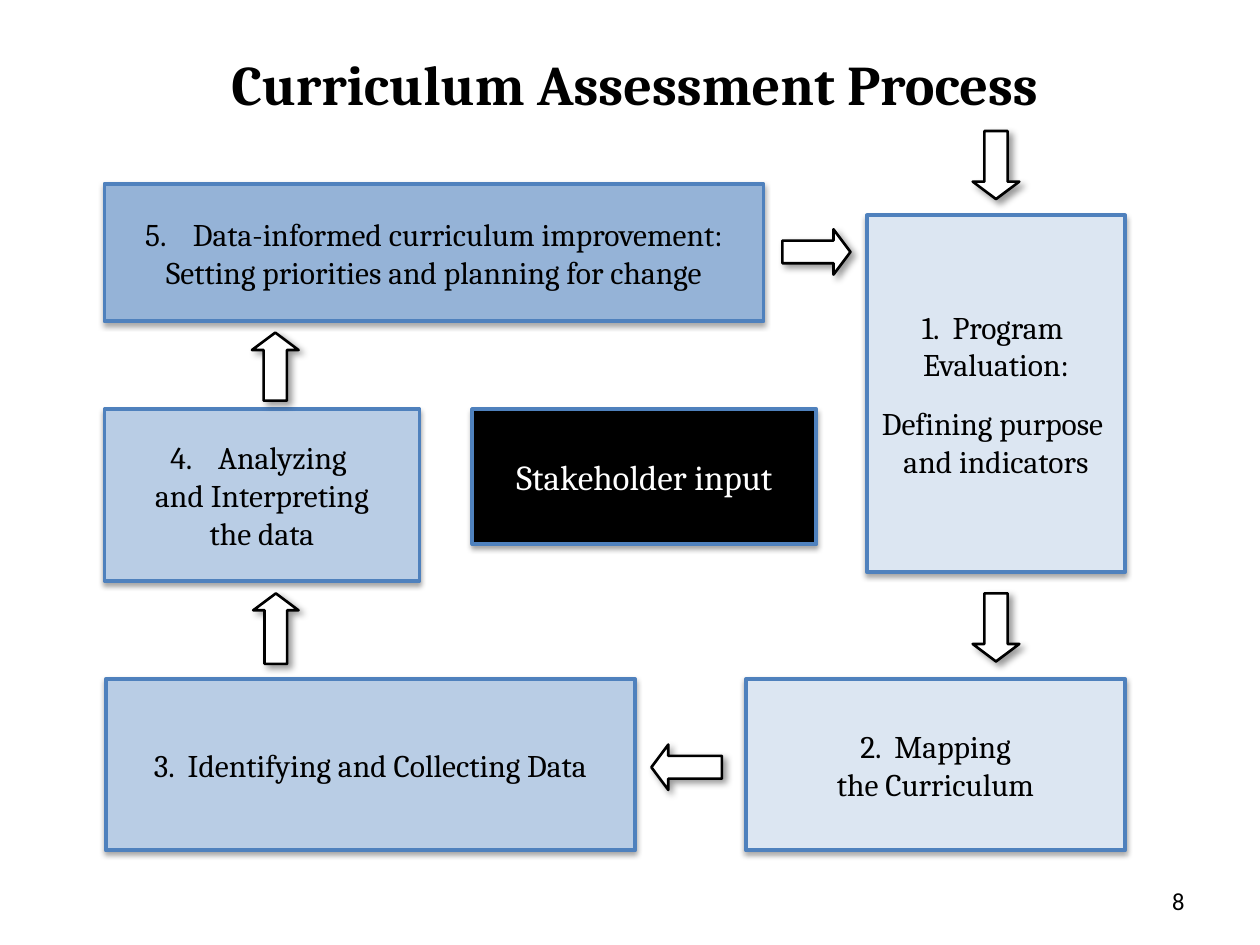
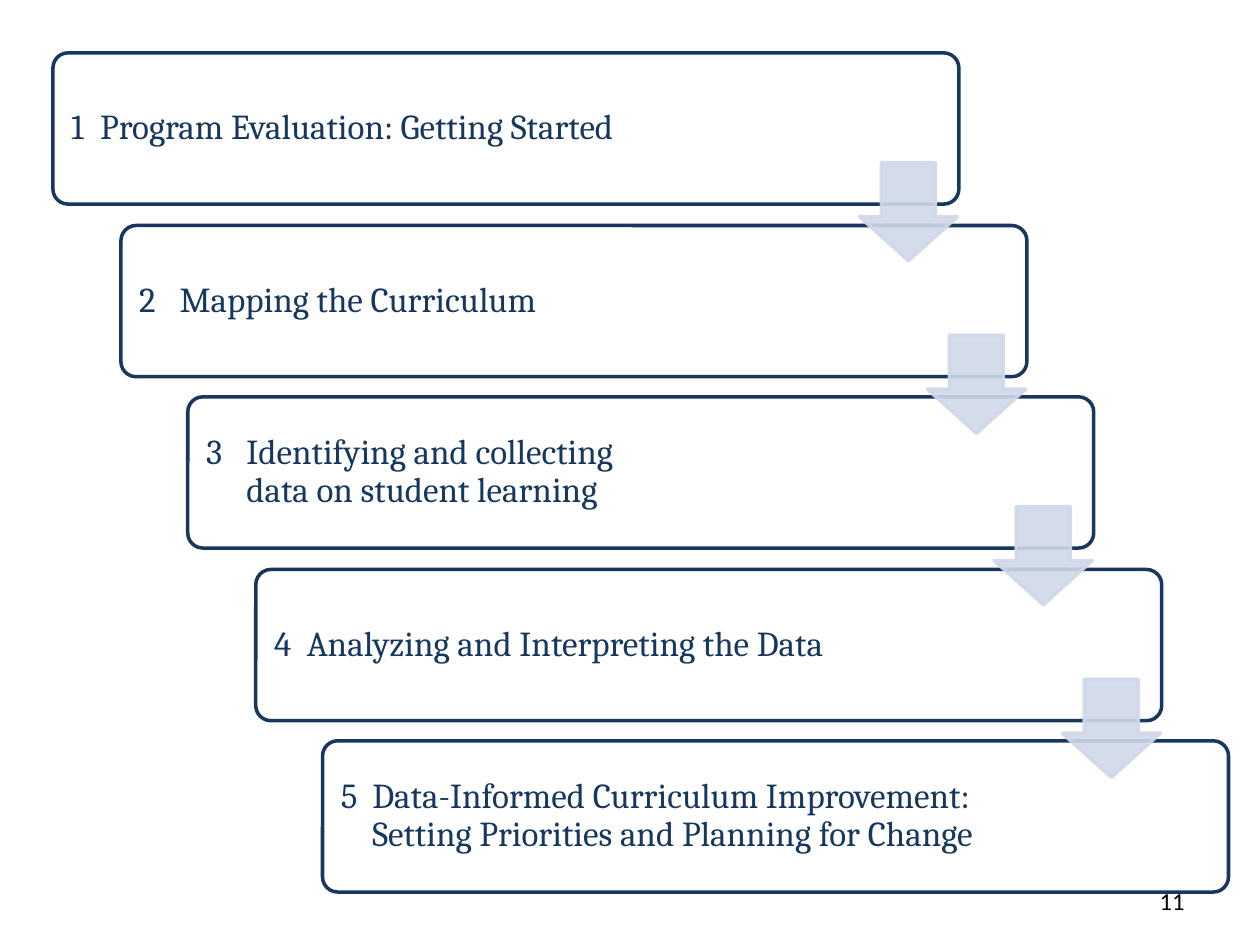
from pptx import Presentation
from pptx.dml.color import RGBColor
from pptx.enum.shapes import MSO_SHAPE
from pptx.enum.text import MSO_ANCHOR, PP_ALIGN
from pptx.oxml import parse_xml
from pptx.oxml.ns import nsdecls, qn
from pptx.util import Emu, Pt

EMU_PER_PX = 9144
BOX, ROUND = MSO_SHAPE.FLOWCHART_PROCESS, MSO_SHAPE.ROUNDED_RECTANGLE
UP, DOWN = MSO_SHAPE.UP_ARROW, MSO_SHAPE.DOWN_ARROW
LEFT, RIGHT = MSO_SHAPE.LEFT_ARROW, MSO_SHAPE.RIGHT_ARROW
MIDDLE = MSO_ANCHOR.MIDDLE
AL_LEFT, AL_CENTER, AL_RIGHT = PP_ALIGN.LEFT, PP_ALIGN.CENTER, PP_ALIGN.RIGHT

COLORS = {
    "black": "000000", "white": "FFFFFF", "outline": "4F81BD",
    "pale": "DCE6F2", "light": "B9CDE5", "medium": "95B3D7",
    "navy": "17375E", "arrow": "D0D8E8",
}
HEADING, BODY = "Cambria", "Calibri"
BOX_SHADOW = (35, 3.1, 1.8, 90)
ARROW_SHADOW = (40, 4, 3, 45)

PROCESS_BOXES = [
    ((688, 171, 205, 283), "pale", ["1.  Program \vEvaluation:", "Defining purpose \vand indicators"], None),
    ((592, 539, 301, 136), "pale", ["2.  Mapping", "the Curriculum"], None),
    ((84, 539, 420, 136), "light", ["3.  Identifying and Collecting Data"], None),
    ((83, 325, 250, 136), "light", ["Analyzing ", "and Interpreting", "the data"], 4),
    ((83, 146, 523, 109), "medium",
     ["Data-informed curriculum improvement:", "Setting priorities and planning for change"], 5),
]
PROCESS_ARROWS = [
    (DOWN, (772, 104, 37, 54)), (DOWN, (772, 471, 37, 54)),
    (LEFT, (517, 591, 56, 36)), (UP, (201, 471, 36, 56)),
    (UP, (200, 264, 37, 54)), (RIGHT, (621, 182, 54, 36)),
]
STEPS = [
    ("Program Evaluation: Getting Started", 23),
    ("Mapping the Curriculum", 32),
    ("Identifying and collecting \vdata on student learning", 32),
    ("Analyzing and Interpreting the Data", 26),
    ("Data-Informed Curriculum Improvement: \vSetting Priorities and Planning for Change", 25),
]


def px(n):
    """Convert px to EMU."""
    return Emu(round(n * EMU_PER_PX))


def rgb(name):
    """Look up a palette colour."""
    return RGBColor.from_string(COLORS[name])


def add_text(p, text, size, color="black", font=HEADING, bold=False, align=AL_CENTER):
    """Write text into a paragraph, breaking lines at vertical tabs."""
    p.alignment = align
    for i, line in enumerate(text.split("\v")):
        if i:
            p.add_line_break()
        r = p.add_run()
        r.text = line
        r.font.name, r.font.size, r.font.bold = font, Pt(size), bold
        r.font.color.rgb = rgb(color)


def add_label(slide, box, text, size, **style):
    """Add a one-line text box."""
    tf = slide.shapes.add_textbox(*map(px, box)).text_frame
    tf.word_wrap, tf.vertical_anchor = True, MIDDLE
    add_text(tf.paragraphs[0], text, size, **style)


def add_page_number(slide, number):
    """Add the page number at the bottom right."""
    add_label(slide, (717, 695, 233, 40), str(number), 14, font=BODY, align=AL_RIGHT)


def add_figure(slide, kind, box, fill, line, width, adj=(), shadow=None):
    """Add a filled and outlined shape with an optional shadow."""
    sp = slide.shapes.add_shape(kind, *map(px, box))
    sp.fill.solid()
    sp.fill.fore_color.rgb = rgb(fill)
    sp.line.color.rgb = rgb(line)
    sp.line.width = Pt(width)
    for i, value in enumerate(adj):
        sp.adjustments[i] = value
    sp.shadow.inherit = False
    if shadow:
        alpha, blur, dist, angle = shadow
        sp.element.spPr.find(qn("a:effectLst")).append(parse_xml(
            f'<a:outerShdw {nsdecls("a")} blurRad="{Pt(blur)}" dist="{Pt(dist)}" '
            f'dir="{angle * 60000}" rotWithShape="0"><a:srgbClr val="{COLORS["black"]}">'
            f'<a:alpha val="{alpha * 1000}"/></a:srgbClr></a:outerShdw>'))
    return sp


def set_indent(p, hang):
    """Give a paragraph a hanging indent."""
    pPr = p._p.get_or_add_pPr()
    pPr.set("marL", str(px(hang)))
    pPr.set("indent", str(-px(hang)))
    return pPr


def add_process_box(slide, box, fill, lines, start=None, size=18, color="black"):
    """Add a process box, numbering its first line from start if given."""
    sp = add_figure(slide, BOX, box, fill, "outline", 2.25, shadow=BOX_SHADOW)
    tf = sp.text_frame
    tf.word_wrap, tf.vertical_anchor = False, MIDDLE
    tf.margin_left = tf.margin_right = px(9)
    tf.margin_top = tf.margin_bottom = px(4)
    for i, line in enumerate(lines):
        p = tf.add_paragraph() if i else tf.paragraphs[0]
        add_text(p, line, size, color)
        if i and "\v" in line:
            p.space_before = Pt(12)
    if start:
        set_indent(tf.paragraphs[0], 38).append(parse_xml(
            f'<a:buAutoNum {nsdecls("a")} type="arabicPeriod" startAt="{start}"/>'))


def build_process(prs):
    """Build the cycle of assessment stages."""
    slide = prs.slides.add_slide(prs.slide_layouts[6])
    add_label(slide, (8, 35, 992, 62), "Curriculum Assessment Process", 32, bold=True)
    add_page_number(slide, 8)
    for box, fill, lines, start in PROCESS_BOXES:
        add_process_box(slide, box, fill, lines, start)
    add_process_box(slide, (375, 325, 273, 107), "black", ["Stakeholder input"],
                    size=20, color="white")
    for kind, box in PROCESS_ARROWS:
        add_figure(slide, kind, box, "white", "black", 1.5, (0.5, 0.374), ARROW_SHADOW)


def add_step(slide, box, number, text, hang):
    """Add one numbered step of the staircase."""
    sp = add_figure(slide, ROUND, box, "white", "navy", 2, (0.1,))
    tf = sp.text_frame
    tf.word_wrap, tf.vertical_anchor = True, MIDDLE
    tf.margin_left = tf.margin_right = px(11)
    p = tf.paragraphs[0]
    p.line_spacing = 0.9
    set_indent(p, hang)
    add_text(p, f"{number}\t{text}", 20, "navy", align=AL_LEFT)


def add_step_arrow(slide, x, y):
    """Add the translucent arrow leading down from the step at x, y."""
    sp = add_figure(slide, DOWN, (x + 640, y + 87, 78, 78), "arrow", "arrow", 2, (0.55, 0.45))
    for clr in sp.element.spPr.iter(qn("a:srgbClr")):
        clr.append(parse_xml(f'<a:alpha {nsdecls("a")} val="90000"/>'))


def build_staircase(prs):
    """Build the staircase of five steps."""
    slide = prs.slides.add_slide(prs.slide_layouts[6])
    add_page_number(slide, 11)
    corners = [(round(42 + 53.6 * i), round(42 + 136.6 * i)) for i in range(len(STEPS))]
    for number, ((x, y), (text, hang)) in enumerate(zip(corners, STEPS), 1):
        add_step(slide, (x, y, 719, 120), number, text, hang)
    for x, y in corners[:-1]:
        add_step_arrow(slide, x, y)


def main():
    """Build and save the presentation."""
    prs = Presentation()
    prs.slide_width, prs.slide_height = px(1000), px(750)
    build_process(prs)
    build_staircase(prs)
    prs.save("out.pptx")


if __name__ == "__main__":
    main()
